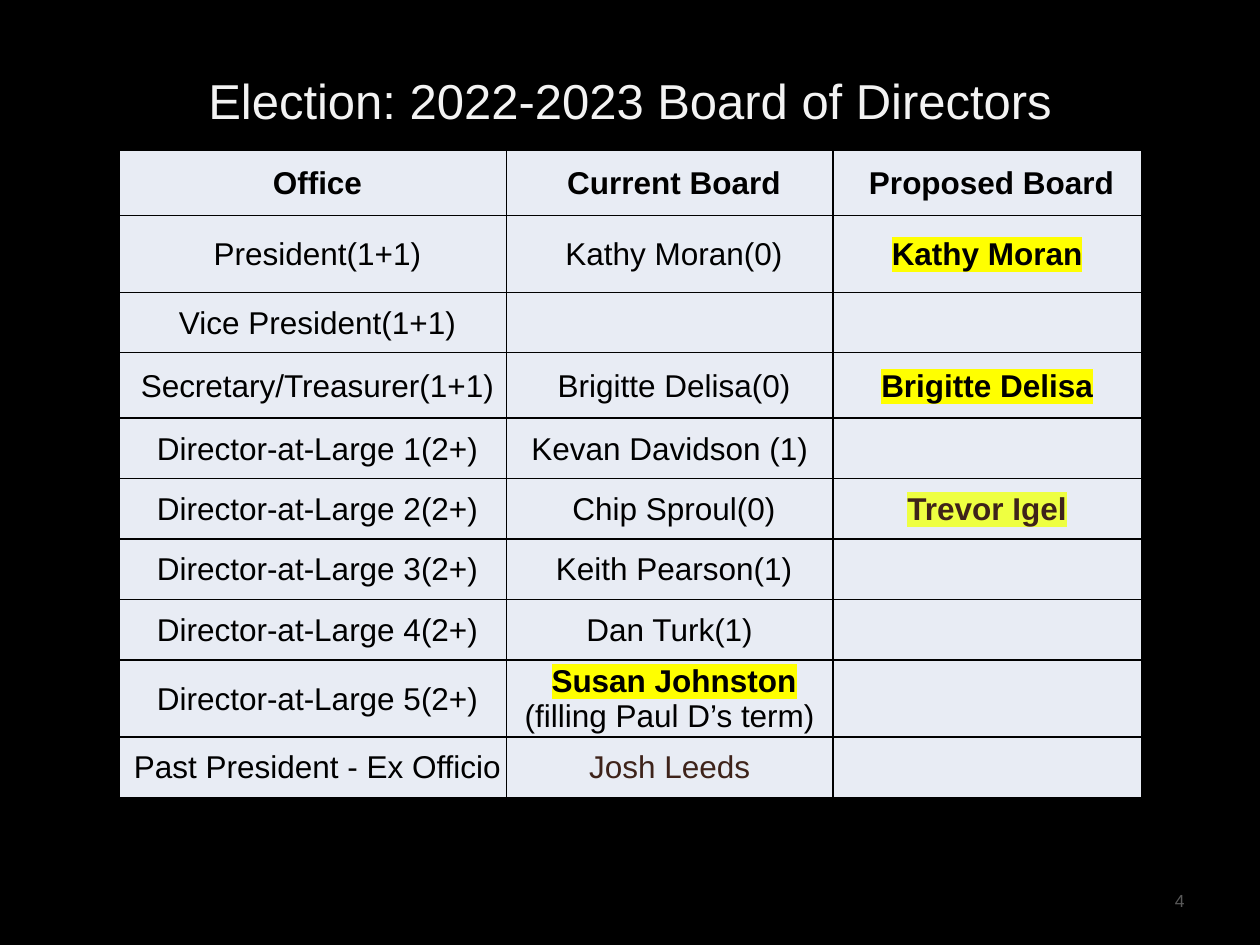
from dataclasses import dataclass

from lxml.etree import SubElement
from pptx import Presentation
from pptx.dml.color import RGBColor
from pptx.enum.text import MSO_ANCHOR as Anchor, PP_ALIGN as Align
from pptx.oxml import parse_xml
from pptx.oxml.ns import qn
from pptx.util import Inches, Pt

FONT = "Arial"
COLORS = {
    "background": "000000",
    "title": "F3F3F3",
    "text": "000000",
    "brown": "3E231A",
    "cell": "E8ECF4",
    "border": "000000",
    "yellow": "FFFF00",
    "lime": "EEFF41",
    "number": "595959",
}
NS = 'xmlns:a="http://schemas.openxmlformats.org/drawingml/2006/main"'


@dataclass(frozen=True)
class Run:
    text: str
    color: str = "text"
    bold: bool = False
    highlight: str = ""
    size: float = 18


def rgb(name: str) -> RGBColor:
    return RGBColor.from_string(COLORS[name])


def add_run(p, run: Run) -> None:
    r = p.add_run()
    r.text = run.text
    r.font.size = Pt(run.size)
    r.font.bold = run.bold
    r.font.color.rgb = rgb(run.color)
    if run.highlight:
        mark = SubElement(r.font._element, qn("a:highlight"))
        SubElement(mark, qn("a:srgbClr"), val=COLORS[run.highlight])
    r.font.name = FONT


def add_text(slide, box: tuple, run: Run, align: Align) -> None:
    tf = slide.shapes.add_textbox(*map(Inches, box)).text_frame
    tf.word_wrap = True
    tf.vertical_anchor = Anchor.MIDDLE
    p = tf.paragraphs[0]
    p.alignment = align
    add_run(p, run)


def set_borders(cell) -> None:
    tc_pr = cell._tc.get_or_add_tcPr()
    for i, side in enumerate("LRTB"):
        tc_pr.insert(i, parse_xml(
            f'<a:ln{side} {NS} w="{Pt(1)}"><a:solidFill>'
            f'<a:srgbClr val="{COLORS["border"]}"/></a:solidFill></a:ln{side}>'))


def fill_cell(cell, paragraphs: list[list[Run]]) -> None:
    cell.fill.solid()
    cell.fill.fore_color.rgb = rgb("cell")
    set_borders(cell)
    cell.vertical_anchor = Anchor.MIDDLE
    cell.margin_left = cell.margin_right = cell.margin_top = Inches(0.01)
    cell.margin_bottom = 0
    tf = cell.text_frame
    for i, runs in enumerate(paragraphs):
        p = tf.add_paragraph() if i else tf.paragraphs[0]
        p.alignment = Align.CENTER
        for run in runs:
            add_run(p, run)


def line(text: str, **style) -> list[list[Run]]:
    return [[Run(text, **style)]]


def elected(name: str) -> Run:
    return Run(name, bold=True, highlight="yellow")


# Board table: office, current board, proposed board
COL_WIDTHS = [3.07, 2.59, 2.45]
ROW_HEIGHTS = [0.52, 0.61, 0.48, 0.52, 0.48, 0.48, 0.48, 0.48, 0.47, 0.48]
HEADER = [line(t, bold=True) for t in (" Office", " Current Board", " Proposed Board")]
EMPTY = []
BOARD = [
    (" President(1+1)", line(" Kathy Moran(0)"), [[elected("Kathy Moran")]]),
    (" Vice President(1+1)", EMPTY, EMPTY),
    (" Secretary/Treasurer(1+1)", line(" Brigitte Delisa(0)"), [[elected("Brigitte Delisa")]]),
    (" Director-at-Large 1(2+)", line("Kevan Davidson (1)"), EMPTY),
    (" Director-at-Large 2(2+)", line(" Chip Sproul(0)"),
     line("Trevor Igel", color="brown", bold=True, highlight="lime")),
    (" Director-at-Large 3(2+)", line(" Keith Pearson(1)"), EMPTY),
    (" Director-at-Large 4(2+)", line("Dan Turk(1)"), EMPTY),
    (" Director-at-Large 5(2+)",
     [[Run(" "), elected("Susan Johnston")], [Run("(filling Paul D’s term)")]], EMPTY),
    (" Past President - Ex Officio", line("Josh Leeds", color="brown"), EMPTY),
]


def add_board(slide) -> None:
    rows = [HEADER] + [[line(office), now, new] for office, now, new in BOARD]
    frame = slide.shapes.add_table(
        len(rows), len(COL_WIDTHS), Inches(0.95), Inches(1.19),
        Inches(sum(COL_WIDTHS)), Inches(sum(ROW_HEIGHTS)))
    table = frame.table
    table.first_row = table.horz_banding = False
    for col, width in zip(table.columns, COL_WIDTHS):
        col.width = Inches(width)
    for row, height, contents in zip(table.rows, ROW_HEIGHTS, rows):
        row.height = Inches(height)
        for cell, paragraphs in zip(row.cells, contents):
            fill_cell(cell, paragraphs)


def main() -> None:
    prs = Presentation()
    prs.slide_width, prs.slide_height = Inches(10), Inches(7.5)
    s = prs.slides.add_slide(prs.slide_layouts[6])
    s.background.fill.solid()
    s.background.fill.fore_color.rgb = rgb("background")

    # Title
    add_text(s, (0.5, 0.17, 9, 1.25),
             Run("Election: 2022-2023 Board of Directors", "title", size=28), Align.CENTER)
    add_board(s)
    # Slide number
    add_text(s, (7.17, 6.95, 2.33, 0.4), Run("4", "number", size=10), Align.RIGHT)

    prs.save("out.pptx")


if __name__ == "__main__":
    main()
